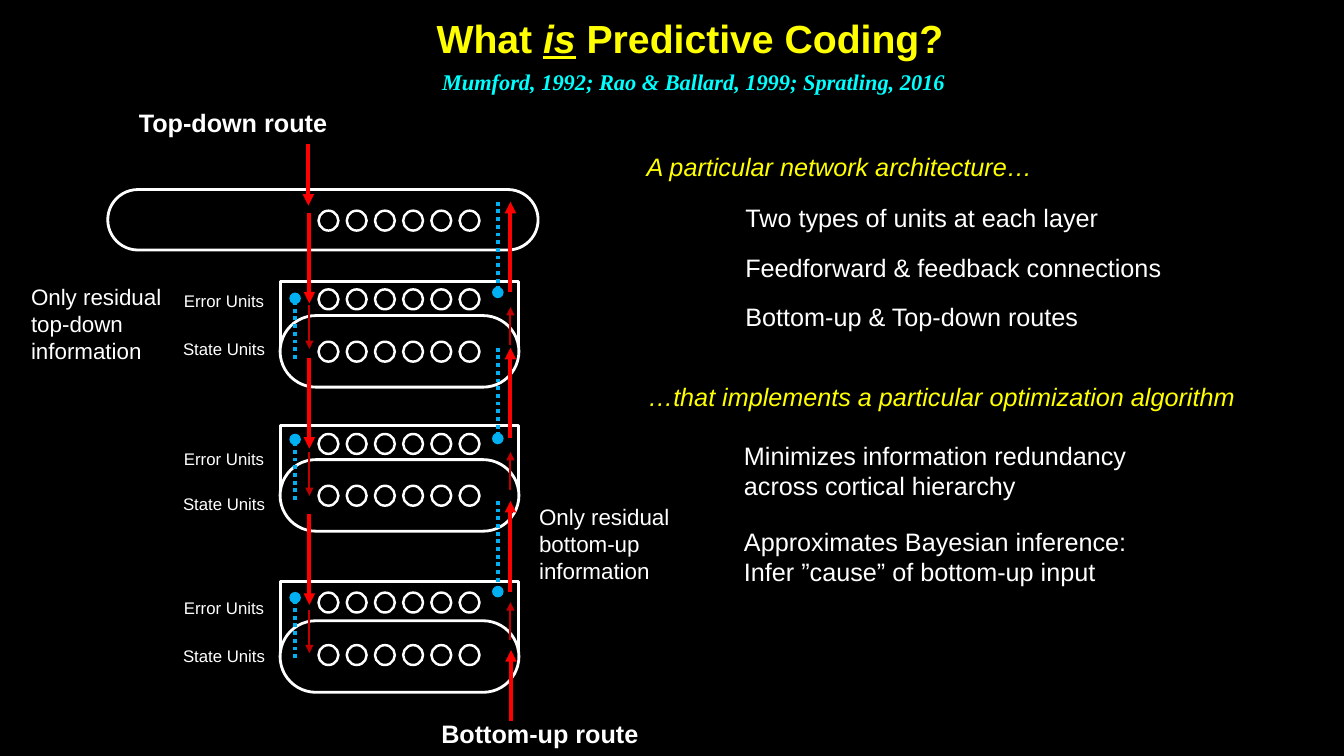
from lxml import etree
from pptx import Presentation
from pptx.dml.color import RGBColor
from pptx.enum.dml import MSO_LINE
from pptx.enum.shapes import MSO_CONNECTOR, MSO_SHAPE
from pptx.enum.text import MSO_ANCHOR, MSO_AUTO_SIZE, PP_ALIGN
from pptx.oxml.ns import qn
from pptx.util import Pt

LEFT, CENTER, RIGHT = PP_ALIGN.LEFT, PP_ALIGN.CENTER, PP_ALIGN.RIGHT
TOP, FIXED = MSO_ANCHOR.TOP, MSO_AUTO_SIZE.NONE
RECT, PILL, OVAL = MSO_SHAPE.RECTANGLE, MSO_SHAPE.ROUNDED_RECTANGLE, MSO_SHAPE.OVAL
LINE, DOT = MSO_CONNECTOR.STRAIGHT, MSO_LINE.ROUND_DOT
BLACK, WHITE, YELLOW, CYAN = "000000", "FFFFFF", "FFFF00", "00FFFF"
RED, DARK, BLUE = "FF0000", "C00000", "00B0F0"
UNITS, PITCH, SIZE = 6, 20.16, 14.2

LAYERS = [
    dict(top=200.9, state=24.5, rows=(5.8, 43.2), tags=(2.9, 37.4), side=12.2,
         down=15.8, dark=17.3, rise=45.4, feed=8),
    dict(top=303.8, state=24.5, rows=(6.2, 43.2), tags=(13, 45.4), side=10.1,
         down=16.6, dark=19.4, rise=46.1, feed=9.4),
    dict(top=415.4, state=28, rows=(7.9, 45.4), tags=(8, 42.5), side=11.5,
         down=16.6, dark=20.2, rise=41.8, feed=7.2),
]


def shade(code):
    """Turn a hex string into a colour."""
    return RGBColor.from_string(code)


def write(para, text, size, color=WHITE, font="Arial", bold=False, slant=False, under=False):
    """Add one formatted run to a paragraph."""
    run = para.add_run()
    run.text = text
    face = run.font
    face.name, face.size, face.color.rgb = font, Pt(size), shade(color)
    face.bold, face.italic, face.underline = bold, slant, under


def label(slide, box, lines, size, align=LEFT, inset=(7.2, 3.6), **style):
    """Add a text box with one paragraph per line."""
    frame = slide.shapes.add_textbox(*map(Pt, box)).text_frame
    frame.word_wrap = True
    frame.margin_left = frame.margin_right = Pt(inset[0])
    frame.margin_top = frame.margin_bottom = Pt(inset[1])
    for num, text in enumerate(lines):
        para = frame.add_paragraph() if num else frame.paragraphs[0]
        para.alignment = align
        write(para, text, size, **style)


def place(holder, box):
    """Move a placeholder and return its text frame."""
    holder.left, holder.top, holder.width, holder.height = map(Pt, box)
    frame = holder.text_frame
    frame.auto_size, frame.vertical_anchor, frame.word_wrap = FIXED, TOP, True
    return frame


def fill_list(holder, box, items, **style):
    """Fill a body placeholder with plain lines and the gaps above them."""
    frame = place(holder, box)
    for num, (text, gap) in enumerate(items):
        para = frame.add_paragraph() if num else frame.paragraphs[0]
        para.alignment, para.space_before = LEFT, Pt(gap)
        props = para._p.get_or_add_pPr()
        props.set("marL", "0")
        props.set("indent", "0")
        etree.SubElement(props, qn("a:buNone"))
        write(para, text, 18, **style)


def outline(slide, kind, box, weight, fill=None):
    """Add a white outlined shape."""
    shape = slide.shapes.add_shape(kind, *map(Pt, box))
    shape.shadow.inherit = False
    shape.line.color.rgb, shape.line.width = shade(WHITE), Pt(weight)
    if fill:
        shape.fill.solid()
        shape.fill.fore_color.rgb = shade(fill)
    else:
        shape.fill.background()
    if kind == PILL:
        shape.adjustments[0] = 0.5


def wire(slide, x, start, end, color, weight=2.75, head="triangle"):
    """Draw an upright link; an oval head makes it dotted."""
    link = slide.shapes.add_connector(LINE, Pt(x), Pt(start), Pt(x), Pt(end))
    link.line.color.rgb, link.line.width = shade(color), Pt(weight)
    if head == "oval":
        link.line.dash_style = DOT
    props = link._element.spPr
    etree.SubElement(props.find(qn("a:ln")), qn("a:tailEnd"), type=head)
    etree.SubElement(props, qn("a:effectLst"))


def row(slide, x, y):
    """Draw a row of units."""
    for num in range(UNITS):
        outline(slide, OVAL, (x + num * PITCH, y, SIZE, SIZE), 1.75)


def layer(slide, x, top, state, rows, tags, side, down, dark, rise, feed):
    """Draw a layer of error and state units with its links."""
    wide, high = 170.6, 51.1
    outline(slide, RECT, (x, top, wide, high), 2)
    outline(slide, PILL, (x, top + state, wide, high), 2, BLACK)
    for name, drop, tag in zip(("Error Units", "State Units"), rows, tags):
        row(slide, x + 27.4, top + drop)
        label(slide, (x - 76, top + tag, 72, 21.6), [name], 12, CENTER, (3.6, 3.6))
    wire(slide, x + 10.7, top + side + 43.2, top + side, BLUE, head="oval")
    wire(slide, x + 20.9, top + down - 64.8, top + down, RED)
    wire(slide, x + 20.9, top + dark, top + dark + 31, DARK, 1.5)
    wire(slide, x + 155.5, top + feed - 64.8, top + feed, BLUE, head="oval")
    wire(slide, x + 164.5, top + rise, top + rise - 27, DARK, 1.5)
    wire(slide, x + 164.5, top + feed, top + feed - 64.8, RED)


def network(slide, x):
    """Draw the stack of layers with its routes and captions."""
    outline(slide, PILL, (x - 123.1, 135.4, 307.4, 43.2), 2, BLACK)
    row(slide, x + 27.4, 150.5)
    for data in LAYERS:
        layer(slide, x, **data)
    wire(slide, x + 20.2, 103, 146.9, RED)
    wire(slide, x + 164.9, 514.8, 464.4, RED)
    label(slide, (x - 108, 73.4, 150, 28.8), ["Top-down route"], 18, bold=True)
    label(slide, (x + 108, 509.8, 157, 28.8), ["Bottom-up route"], 18, bold=True)
    for left, top, way in ((x - 185, 198.7, "top-down"), (x + 177.9, 355.7, "bottom-up")):
        label(slide, (left, top, 113, 65.5), ["Only residual", way, "information"], 16)


def header(slide, box):
    """Fill the title and add the sources under it."""
    left, top, wide, high = box
    frame = place(slide.shapes.title, box)
    frame.word_wrap = False
    para = frame.paragraphs[0]
    para.alignment = CENTER
    for text, mark in (("What ", False), ("is", True), (" Predictive Coding?", False)):
        write(para, text, 28, YELLOW, bold=True, slant=mark, under=mark)
    label(slide, (left - 20, top + 38.9, wide + 18.7, 26.6),
          ["Mumford, 1992; Rao & Ballard, 1999; Spratling, 2016"], 16, RIGHT,
          color=CYAN, font="Times New Roman", bold=True, slant=True)


def points(slide, x, y):
    """Fill the two headings and their lists."""
    parts = {hold.placeholder_format.idx: hold for hold in slide.placeholders}
    head = dict(color=YELLOW, slant=True)
    fill_list(parts[1], (x, y, 300, 28.8), [("A particular network architecture…", 0)], **head)
    fill_list(parts[2], (x + 70.5, y + 36.7, 330, 100),
              [("Two types of units at each layer", 0),
               ("Feedforward & feedback connections", 13.7),
               ("Bottom-up & Top-down routes", 13.7)])
    fill_list(parts[3], (x + 1, y + 164.2, 450, 28.8),
              [("…that implements a particular optimization algorithm", 0)], **head)
    fill_list(parts[4], (x + 69.5, y + 206.6, 310, 130),
              [("Minimizes information redundancy", 0), ("across cortical hierarchy", 0),
               ("Approximates Bayesian inference:", 18),
               ("Infer ”cause” of bottom-up input", 0)])


def main():
    """Build and save the slide."""
    deck = Presentation()
    deck.slide_width, deck.slide_height = Pt(960), Pt(540)
    slide = deck.slides.add_slide(deck.slide_layouts[4])
    slide.background.fill.solid()
    slide.background.fill.fore_color.rgb = shade(BLACK)
    header(slide, (302.4, 6.5, 380.9, 41))
    points(slide, 454.7, 104.4)
    network(slide, 200.1)
    deck.save("out.pptx")


if __name__ == "__main__":
    main()
